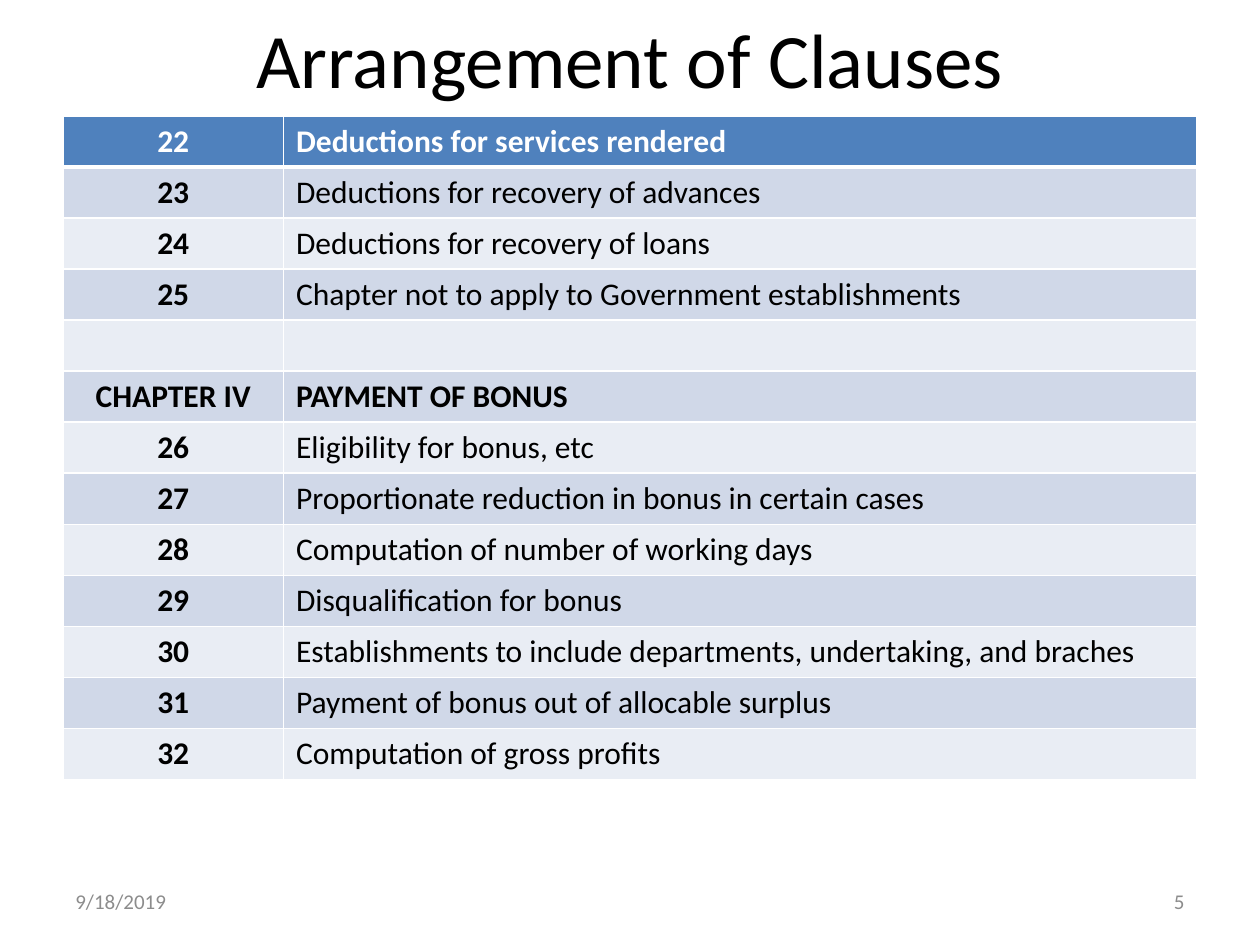
from dataclasses import dataclass

from lxml import etree
from pptx import Presentation
from pptx.dml.color import RGBColor
from pptx.enum.text import MSO_ANCHOR, PP_ALIGN
from pptx.oxml.ns import qn
from pptx.util import Inches, Pt

LEFT, CENTER, RIGHT = PP_ALIGN.LEFT, PP_ALIGN.CENTER, PP_ALIGN.RIGHT
MIDDLE = MSO_ANCHOR.MIDDLE


@dataclass(frozen=True)
class Theme:
    font: str = "Calibri"
    title_size: int = 44
    table_size: int = 18
    footer_size: int = 12
    ink: str = "000000"
    white: str = "FFFFFF"
    footer: str = "8C8C8C"
    header_fill: str = "4F81BD"
    bands: tuple = ("D0D8E8", "E9EDF4")
    rule: int = 1
    header_rule: int = 3


CLAUSES = [
    ("22", "Deductions for services rendered"),
    ("23", "Deductions for recovery of advances"),
    ("24", "Deductions for recovery of loans"),
    ("25", "Chapter not to apply to Government establishments"),
    ("", ""),
    ("CHAPTER IV", "PAYMENT OF BONUS"),
    ("26", "Eligibility for bonus, etc"),
    ("27", "Proportionate reduction in bonus in certain cases"),
    ("28", "Computation of number of working days"),
    ("29", "Disqualification for bonus"),
    ("30", "Establishments to include departments, undertaking, and braches"),
    ("31", "Payment of bonus out of allocable surplus"),
    ("32", "Computation of gross profits"),
]


class SlideBuilder:
    def __init__(self, page, theme):
        self.page = page
        self.theme = theme

    def set_text(self, frame, text, size, color, align=LEFT, bold=False):
        para = frame.paragraphs[0]
        para.text = text
        para.alignment = align
        para.font.name = self.theme.font
        para.font.size = Pt(size)
        para.font.bold = bold
        para.font.color.rgb = RGBColor.from_string(color)

    def text(self, left, top, width, height, text, size, color, align=LEFT):
        box = self.page.shapes.add_textbox(
            Inches(left), Inches(top), Inches(width), Inches(height))
        box.text_frame.word_wrap = True
        box.text_frame.vertical_anchor = MIDDLE
        self.set_text(box.text_frame, text, size, color, align)

    def borders(self, cell, top, bottom):
        properties = cell._tc.get_or_add_tcPr()
        rule = self.theme.rule
        for side, width in (("L", rule), ("R", rule), ("T", top), ("B", bottom)):
            line = etree.SubElement(properties, qn(f"a:ln{side}"), w=str(Pt(width)))
            fill = etree.SubElement(line, qn("a:solidFill"))
            etree.SubElement(fill, qn("a:srgbClr"), val=self.theme.white)

    def table(self, left, top, widths, height, rows):
        theme = self.theme
        table = self.page.shapes.add_table(
            len(rows), len(widths), Inches(left), Inches(top),
            Inches(sum(widths)), Inches(height)).table
        for column, width in zip(table.columns, widths):
            column.width = Inches(width)
        for row, values in enumerate(rows):
            header = row == 0
            chapter = values[0].startswith("CHAPTER")
            fill = theme.header_fill if header else theme.bands[(row - 1) % 2]
            for column, value in enumerate(values):
                cell = table.cell(row, column)
                number = column == 0
                self.set_text(cell.text_frame, value, theme.table_size,
                              theme.white if header else theme.ink,
                              CENTER if number else LEFT,
                              number or header or chapter)
                self.borders(cell,
                             theme.header_rule if row == 1 else theme.rule,
                             theme.header_rule if header else theme.rule)
                cell.fill.solid()
                cell.fill.fore_color.rgb = RGBColor.from_string(fill)


def main():
    deck = Presentation()
    deck.slide_width, deck.slide_height = Inches(10), Inches(7.5)
    theme = Theme()
    slide = SlideBuilder(deck.slides.add_slide(deck.slide_layouts[6]), theme)

    # Title
    slide.text(0.5, 0, 9, 0.92, "Arrangement of Clauses",
               theme.title_size, theme.ink, CENTER)

    # Clause list
    slide.table(0.5, 0.92, (1.75, 7.25), 5.27, CLAUSES)

    # Date and page number
    for left, text, align in ((0.5, "9/18/2019", LEFT), (7.17, "5", RIGHT)):
        slide.text(left, 6.95, 2.33, 0.4, text,
                   theme.footer_size, theme.footer, align)

    deck.save("out.pptx")


if __name__ == "__main__":
    main()
